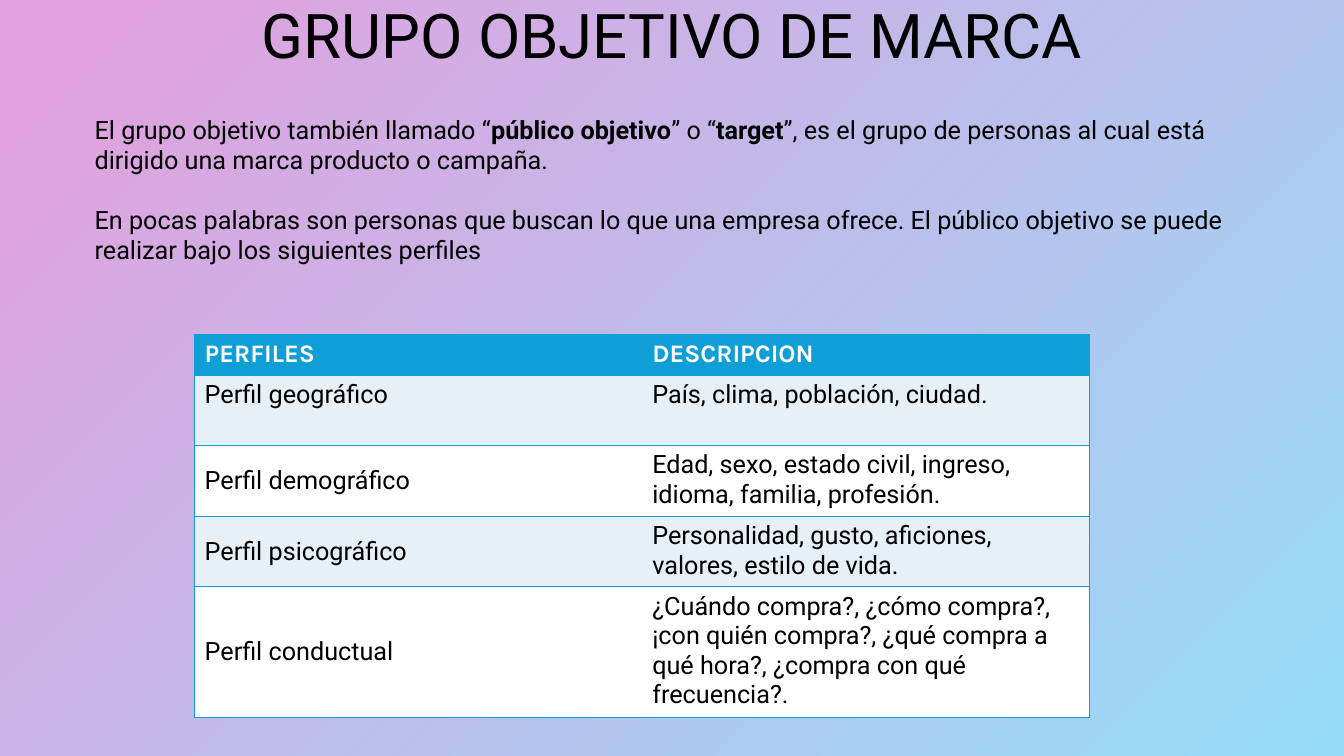
from lxml import etree
from pptx import Presentation
from pptx import util as u
from pptx.dml.color import RGBColor
from pptx.enum import text
from pptx.oxml.ns import qn

BLUE = "0F9ED5"
BLACK = "000000"
WHITE = "FFFFFF"
BAND = "E7F0F7"

TITLE = "GRUPO OBJETIVO DE MARCA"
INTRO = [
    [("El grupo objetivo también llamado “", False), ("público objetivo", True),
     ("” o “", False), ("target", True),
     ("”, es el grupo de personas al cual está dirigido una marca producto o campaña.", False)],
    [("En pocas palabras son personas que buscan lo que una empresa ofrece. "
      "El público objetivo se puede realizar bajo los siguientes perfiles", False)],
]
ROWS = [
    (0.4, "PERFILES", "DESCRIPCION"),
    (0.7, "Perfil geográfico", "País, clima, población, ciudad."),
    (0.7, "Perfil demográfico",
     "Edad, sexo, estado civil, ingreso, idioma, familia, profesión."),
    (0.7, "Perfil psicográfico",
     "Personalidad, gusto, aficiones, valores, estilo de vida."),
    (1.3, "Perfil conductual",
     "¿Cuándo compra?, ¿cómo compra?, ¡con quién compra?, ¿qué compra a qué hora?, "
     "¿compra con qué frecuencia?."),
]


def color(code):
    return RGBColor.from_string(code)


def style(font, size, code=BLACK, name="Roboto", bold=None):
    font.size = u.Pt(size)
    font.name = name
    font.color.rgb = color(code)
    font.bold = bold


def frame(slide, box):
    body = slide.shapes.add_textbox(*map(u.Inches, box)).text_frame
    body.word_wrap = True
    return body


def backdrop(slide):
    fill = slide.background.fill
    fill.gradient()
    fill.gradient_angle = 315
    for stop, code in zip(fill.gradient_stops, ("E59EDD", "96DCF8")):
        stop.color.rgb = color(code)


def title(slide, box):
    body = frame(slide, box)
    body.vertical_anchor = text.MSO_ANCHOR.MIDDLE
    para = body.paragraphs[0]
    para.text = TITLE
    para.alignment = text.PP_ALIGN.CENTER
    para.line_spacing = 0.9
    style(para.font, 44)


def intro(slide, box):
    body = frame(slide, box)
    for i, parts in enumerate(INTRO):
        para = body.add_paragraph() if i else body.paragraphs[0]
        if i:
            para.space_before = u.Pt(21.5)
        for words, bold in parts:
            run = para.add_run()
            run.text = words
            style(run.font, 18, bold=bold)


def border(cell, first):
    props = cell._tc.get_or_add_tcPr()
    inner = "lnR" if first else "lnL"
    for side in ("lnL", "lnR", "lnT", "lnB"):
        line = etree.SubElement(props, qn("a:" + side), w=str(u.Pt(1)))
        if side == inner:
            etree.SubElement(line, qn("a:noFill"))
        else:
            fill = etree.SubElement(line, qn("a:solidFill"))
            etree.SubElement(fill, qn("a:srgbClr"), val=BLUE)


def profiles(slide, box):
    grid = slide.shapes.add_table(len(ROWS), 2, *map(u.Inches, box)).table
    for col in grid.columns:
        col.width = u.Inches(box[2] / 2)
    for r, (high, *words) in enumerate(ROWS):
        grid.rows[r].height = u.Inches(high)
        for c, word in enumerate(words):
            cell = grid.cell(r, c)
            border(cell, c == 0)
            cell.fill.solid()
            back = BLUE if r == 0 else BAND if r % 2 else WHITE
            cell.fill.fore_color.rgb = color(back)
            if c == 0 and r > 1:
                cell.vertical_anchor = text.MSO_ANCHOR.MIDDLE
            para = cell.text_frame.paragraphs[0]
            para.text = word
            if r == 0:
                style(para.font, 18, WHITE, "Karla", True)
            else:
                style(para.font, 18, bold=False)


def main():
    deck = Presentation()
    deck.slide_width = u.Inches(13.33)
    deck.slide_height = u.Inches(7.5)
    slide = deck.slides.add_slide(deck.slide_layouts[6])
    backdrop(slide)
    title(slide, (0.92, 0, 11.5, 0.77))
    intro(slide, (0.84, 1.08, 11.65, 1.62))
    profiles(slide, (1.93, 3.32, 8.88, 3.8))
    deck.save("out.pptx")


if __name__ == "__main__":
    main()
